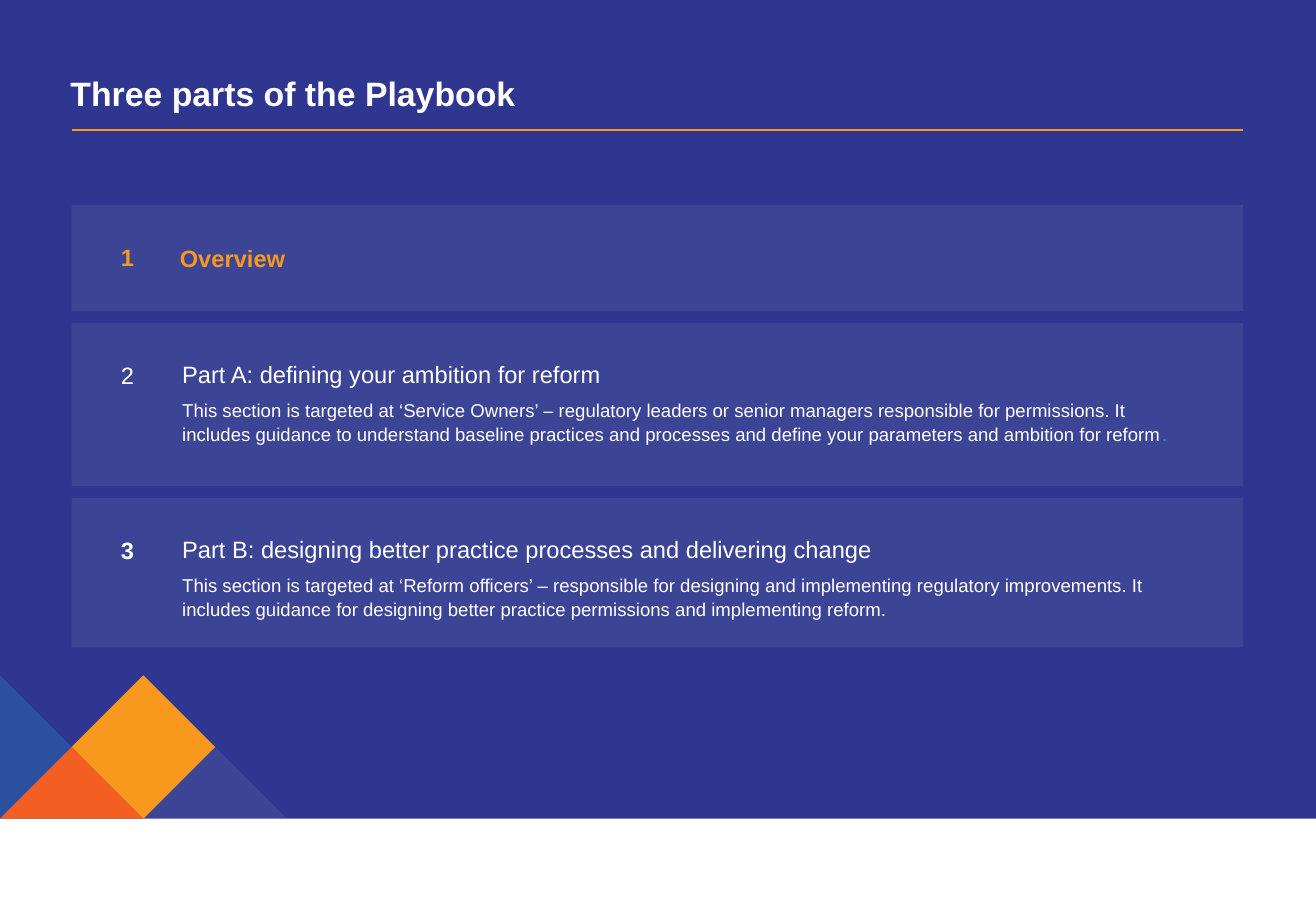
from lxml import etree
from pptx import Presentation
from pptx.dml.color import RGBColor
from pptx.enum.shapes import MSO_CONNECTOR, MSO_SHAPE
from pptx.enum.text import MSO_ANCHOR, MSO_AUTO_SIZE, PP_ALIGN
from pptx.oxml.ns import qn
from pptx.util import Inches, Pt

LEFT, CENTER = PP_ALIGN.LEFT, PP_ALIGN.CENTER
TOP, MIDDLE, BOTTOM = MSO_ANCHOR.TOP, MSO_ANCHOR.MIDDLE, MSO_ANCHOR.BOTTOM
RECT, STRAIGHT = MSO_SHAPE.RECTANGLE, MSO_CONNECTOR.STRAIGHT
NO_FIT = MSO_AUTO_SIZE.NONE

NAVY = RGBColor(0x2E, 0x36, 0x8F)
AMBER = RGBColor(0xF8, 0x98, 0x1D)
ORANGE = RGBColor(0xF2, 0x5E, 0x21)
CYAN = RGBColor(0x25, 0xB3, 0xE0)
TEAL = RGBColor(0x00, 0xB2, 0xA9)
WHITE = RGBColor(0xFF, 0xFF, 0xFF)

WIDTH, HEIGHT = 10.83, 7.5
PANEL = 6.74
EDGE, SPAN = 0.59, 9.64
GAP = 0.1

# Number, heading, body runs, row height, bold number
PARTS = [
    ("1", "Overview", [], 0.87, True),
    ("2", "Part A: defining your ambition for reform",
     [("This section is targeted at ‘Service Owners’ – regulatory leaders or "
       "senior managers responsible for permissions. It includes guidance to "
       "understand baseline practices and processes and define your "
       "parameters and ambition for reform", WHITE), (".", TEAL)],
     1.34, False),
    ("3", "Part B: designing better practice processes and delivering change",
     [("This section is targeted at ‘Reform officers’ – responsible for "
       "designing and implementing regulatory improvements. It includes "
       "guidance for designing better practice permissions and implementing "
       "reform.", WHITE)],
     1.23, True),
]


def paint(shape, color, alpha=100):
    shape.shadow.inherit = False
    shape.fill.solid()
    shape.fill.fore_color.rgb = color
    shape.line.fill.background()
    if alpha < 100:
        tint = shape.fill._xPr.find(".//" + qn("a:srgbClr"))
        etree.SubElement(tint, qn("a:alpha"), val=str(alpha * 1000))


def block(slide, box, color, alpha=100):
    shape = slide.shapes.add_shape(RECT, *map(Inches, box))
    paint(shape, color, alpha)
    return shape


def write(shape, runs, size=14, bold=False, align=LEFT, anchor=TOP,
          inset=0.1, right=0.1, more=False, before=0, lead=1.0):
    """Write (text, color) runs as one paragraph; more adds it after the last."""
    frame = shape.text_frame
    frame.word_wrap = True
    frame.auto_size = NO_FIT
    frame.vertical_anchor = anchor
    frame.margin_left, frame.margin_right = Inches(inset), Inches(right)
    frame.margin_top = frame.margin_bottom = Inches(0.05)
    para = frame.add_paragraph() if more else frame.paragraphs[0]
    para.alignment = align
    para.space_before = Pt(before)
    para.line_spacing = lead
    for text, color in runs:
        run = para.add_run()
        run.text = text
        font = run.font
        font.name, font.size, font.bold = "Arial", Pt(size), bold
        font.color.rgb = color


def label(slide, box, runs, **style):
    shape = slide.shapes.add_textbox(*map(Inches, box))
    write(shape, runs, **style)
    return shape


def header(slide, left, top, width):
    title = slide.shapes.title
    title.left, title.top = Inches(left - 0.11), Inches(top)
    title.width, title.height = Inches(width + 0.12), Inches(0.65)
    write(title, [("Three parts of the Playbook", WHITE)],
          size=20, bold=True, anchor=BOTTOM)
    y = Inches(top + 0.74)
    rule = slide.shapes.add_connector(
        STRAIGHT, Inches(left), y, Inches(left + width), y)
    rule.line.color.rgb = AMBER
    rule.line.width = Pt(1.25)
    etree.SubElement(rule._element.spPr, qn("a:effectLst"))


def motif(slide, left, base, unit):
    """Draw the corner triangles and diamond on a grid of the given unit."""
    pieces = [
        ([(1, 1), (2, 2), (3, 1), (2, 0)], AMBER, 100),
        ([(0, 2), (0, 0), (1, 1)], CYAN, 20),
        ([(3, 1), (2, 0), (4, 0)], WHITE, 7),
        ([(0, 0), (2, 0), (1, 1)], ORANGE, 100),
    ]
    for grid, color, alpha in pieces:
        points = [(Inches(left + x * unit), Inches(base - y * unit))
                  for x, y in grid]
        pen = slide.shapes.build_freeform(*points[0])
        pen.add_line_segments(points[1:], close=True)
        paint(pen.convert_to_shape(), color, alpha)


def row(slide, left, top, width, part):
    number, heading, body, height, bold = part
    bar = block(slide, (left, top, width, height), WHITE, 7)
    color = WHITE if body else AMBER
    label(slide, (left + 0.27, top + 0.24, 0.38, 0.38), [(number, color)],
          bold=bold, align=CENTER, anchor=MIDDLE)
    if body:
        copy = label(slide, (left + 0.91, top + 0.24, 8.23, height - 0.3),
                     [(heading, color)], inset=0, right=0, lead=1.05)
        write(copy, body, size=11, inset=0, right=0, more=True,
              before=6, lead=1.05)
    else:
        write(bar, [(heading, color)], bold=True, anchor=MIDDLE, inset=0.89)


def main():
    deck = Presentation()
    deck.slide_width, deck.slide_height = Inches(WIDTH), Inches(HEIGHT)
    slide = deck.slides.add_slide(deck.slide_layouts[5])
    panel = block(slide, (0, 0, WIDTH, PANEL), NAVY)
    # Send the panel behind the title
    slide.shapes.title._element.addprevious(panel._element)
    motif(slide, 0, PANEL, EDGE)
    header(slide, EDGE, 0.33, SPAN)
    top = 1.69
    for part in PARTS:
        row(slide, EDGE, top, SPAN, part)
        top += part[3] + GAP
    deck.save("out.pptx")


if __name__ == "__main__":
    main()
